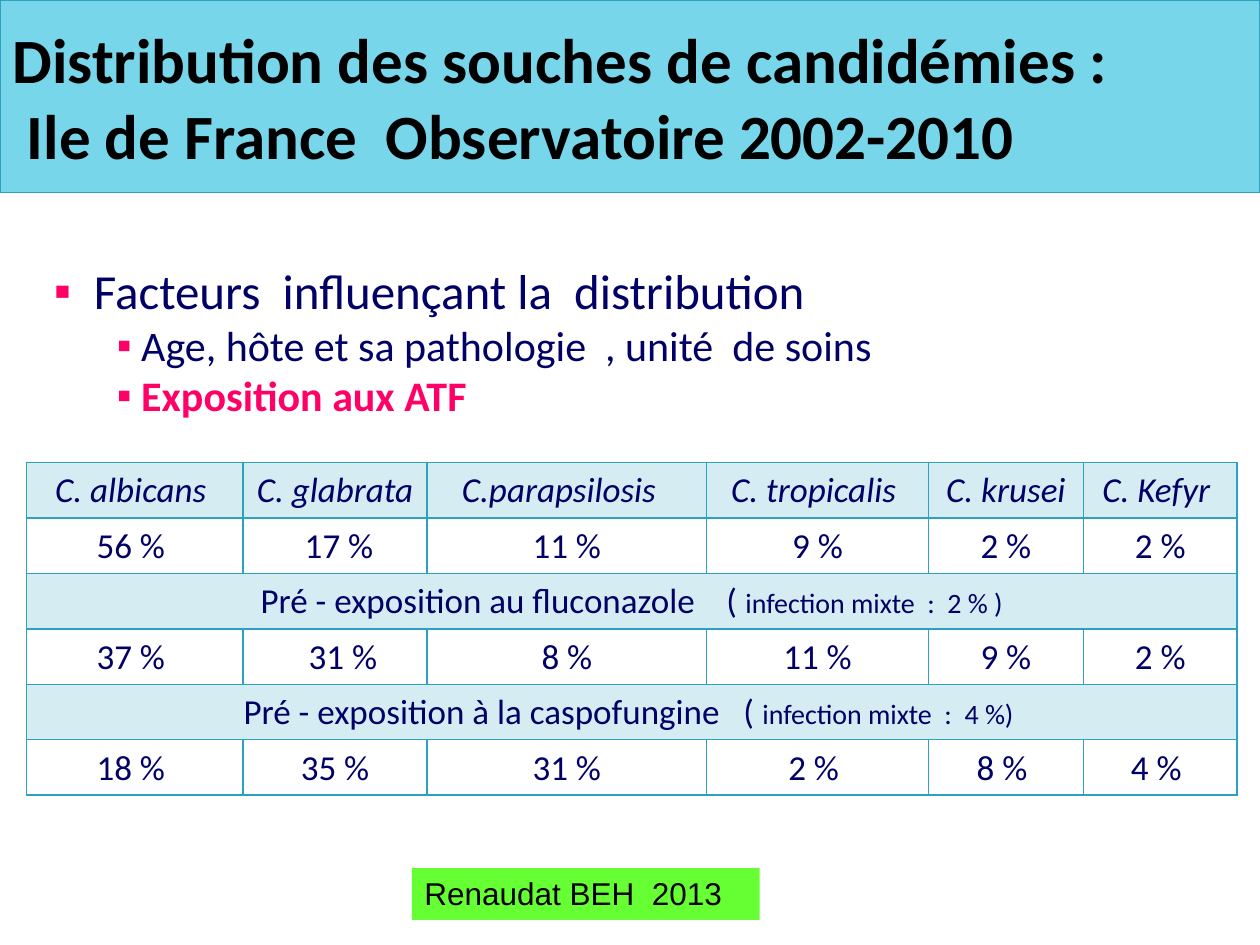
from dataclasses import dataclass

from lxml.etree import SubElement
from pptx import Presentation
from pptx.dml.color import RGBColor as Rgb
from pptx.enum.shapes import MSO_SHAPE as Shape
from pptx.enum.text import MSO_ANCHOR as Anchor, MSO_AUTO_SIZE as AutoSize, PP_ALIGN as Align
from pptx.oxml.ns import qn
from pptx.util import Inches, Pt


@dataclass(frozen=True)
class Theme:
    ink: str = "000066"
    accent: str = "FF0066"
    black: str = "000000"
    banner: str = "78D6EA"
    teal: str = "2DA2BF"
    label: str = "66FF33"
    font: str = "Calibri"
    label_font: str = "Arial"
    title_size: int = 36
    lead_size: int = 28
    point_size: int = 24
    cell_size: int = 20
    note_size: int = 16
    label_size: int = 18


THEME = Theme()
TABLE_TINT = 20
COLUMN_WIDTHS = [1.72, 1.46, 2.22, 1.76, 1.23, 1.22]
ROW_HEIGHT = 0.44
# A row holds either one text per column or a (heading, note) pair across all columns.
ROWS = [
    ["C. albicans ", "C. glabrata", "C.parapsilosis  ", "C. tropicalis ", "C. krusei", "C. Kefyr "],
    ["56 % ", " 17 %", "11 %", "9 %", "2 %", "2 %"],
    ("Pré - exposition au fluconazole    ( ", "infection mixte  :  2 % )"),
    ["37 % ", "  31 %", "8 %", "11 %", "9 %", "2 %"],
    ("Pré - exposition à la caspofungine   ( ", "infection mixte  :  4 %) "),
    ["18 % ", "35 %", "31 %", "2 % ", "8 % ", "4 % "],
]


class SlideBuilder:
    def __init__(self, slide, theme):
        self.slide = slide
        self.theme = theme

    def add_span(self, para, text, **changes):
        span = para.add_run()
        span.text = text
        color = changes.pop("color", self.theme.ink)
        formats = {"name": self.theme.font, "bold": False, "italic": False, **changes}
        for name, value in formats.items():
            setattr(span.font, name, value)
        span.font.color.rgb = Rgb.from_string(color)

    def paint(self, shape, fill, line=None):
        shape.fill.solid()
        shape.fill.fore_color.rgb = Rgb.from_string(fill)
        if line:
            shape.line.color.rgb = Rgb.from_string(line)
            shape.line.width = Pt(0.75)
        else:
            shape.line.fill.background()

    def title(self, lines, left, top, width, height):
        title = self.slide.shapes.title
        place = {"left": left, "top": top, "width": width, "height": height}
        for name, value in place.items():
            setattr(title, name, Inches(value))
        self.paint(title, self.theme.banner, self.theme.teal)
        title.text_frame.vertical_anchor = Anchor.MIDDLE
        para = title.text_frame.paragraphs[0]
        para.alignment = Align.LEFT
        for index, line in enumerate(lines):
            if index:
                para.add_line_break()
            self.add_span(para, line, size=Pt(self.theme.title_size), bold=True,
                          color=self.theme.black)

    def bullets(self, items, left, top, width, height):
        """Each item is (text, level, margin, indent, span format)."""
        box = self.slide.shapes.add_textbox(*map(Inches, (left, top, width, height)))
        frame = box.text_frame
        frame.word_wrap = True
        for index, (text, level, margin, indent, formats) in enumerate(items):
            para = frame.add_paragraph() if index else frame.paragraphs[0]
            para.level = level
            self.add_span(para, text, **formats)
            props = para._p.get_or_add_pPr()
            props.set("marL", str(Inches(margin)))
            props.set("indent", str(Inches(indent)))
            color = SubElement(props, qn("a:buClr"))
            SubElement(color, qn("a:srgbClr"), val=self.theme.accent)
            SubElement(props, qn("a:buFont"), typeface=self.theme.label_font)
            SubElement(props, qn("a:buChar"), char="▪")

    def style_cell(self, cell, tinted):
        if tinted:
            cell.fill.solid()
            cell.fill.fore_color.rgb = Rgb.from_string(self.theme.teal)
            color = cell._tc.tcPr.find(".//" + qn("a:srgbClr"))
            SubElement(color, qn("a:alpha"), val=str(TABLE_TINT * 1000))
        else:
            cell.fill.background()
        props = cell._tc.get_or_add_tcPr()
        for index, side in enumerate(("a:lnL", "a:lnR", "a:lnT", "a:lnB")):
            border = SubElement(props, qn(side), w=str(Pt(1)))
            fill = SubElement(border, qn("a:solidFill"))
            SubElement(fill, qn("a:srgbClr"), val=self.theme.teal)
            props.insert(index, border)

    def write_cell(self, cell, text, note="", italic=False):
        para = cell.text_frame.paragraphs[0]
        para.alignment = Align.CENTER
        para.line_spacing = 1.02
        self.add_span(para, text, size=Pt(self.theme.cell_size), italic=italic)
        if note:
            self.add_span(para, note, size=Pt(self.theme.note_size))

    def table(self, rows, widths, row_height, left, top):
        size = (left, top, sum(widths), row_height * len(rows))
        table = self.slide.shapes.add_table(
            len(rows), len(widths), *map(Inches, size)).table
        table.first_row = table.horz_banding = False
        for column, width in zip(table.columns, widths):
            column.width = Inches(width)
        for index, row in enumerate(rows):
            table.rows[index].height = Inches(row_height)
            cells = list(table.rows[index].cells)
            is_heading = isinstance(row, tuple)
            for cell in cells:
                self.style_cell(cell, tinted=is_heading or index == 0)
            if is_heading:
                cells[0].merge(cells[-1])
                self.write_cell(cells[0], *row)
            else:
                for cell, text in zip(cells, row):
                    self.write_cell(cell, text, italic=index == 0)

    def label(self, text, left, top, width, height):
        box = self.slide.shapes.add_shape(
            Shape.RECTANGLE, *map(Inches, (left, top, width, height)))
        box.shadow.inherit = False
        self.paint(box, self.theme.label)
        formats = {"word_wrap": True, "auto_size": AutoSize.SHAPE_TO_FIT_TEXT,
                   "vertical_anchor": Anchor.TOP}
        for name, value in formats.items():
            setattr(box.text_frame, name, value)
        para = box.text_frame.paragraphs[0]
        para.alignment = Align.LEFT
        self.add_span(para, text, name=self.theme.label_font,
                      size=Pt(self.theme.label_size), color=self.theme.black)


def main():
    deck = Presentation()
    deck.slide_width, deck.slide_height = Inches(10), Inches(7.5)
    page = SlideBuilder(deck.slides.add_slide(deck.slide_layouts[5]), THEME)

    page.title(["Distribution des souches de candidémies :",
                " Ile de France  Observatoire 2002-2010"], 0, 0, 10, 1.53)
    point = {"size": Pt(THEME.point_size)}
    page.bullets([
        (" Facteurs  influençant la  distribution", 0, 0.23, -0.23,
         {"size": Pt(THEME.lead_size)}),
        (" Age, hôte et sa pathologie  , unité  de soins", 1, 0.5, 0, point),
        (" Exposition aux ATF", 1, 0.5, 0, {**point, "bold": True, "color": THEME.accent}),
    ], 0.33, 2.02, 9.37, 1.37)
    page.table(ROWS, COLUMN_WIDTHS, ROW_HEIGHT, 0.21, 3.67)
    page.label("Renaudat BEH  2013", 3.27, 6.89, 2.76, 0.41)

    deck.save("out.pptx")


if __name__ == "__main__":
    main()
